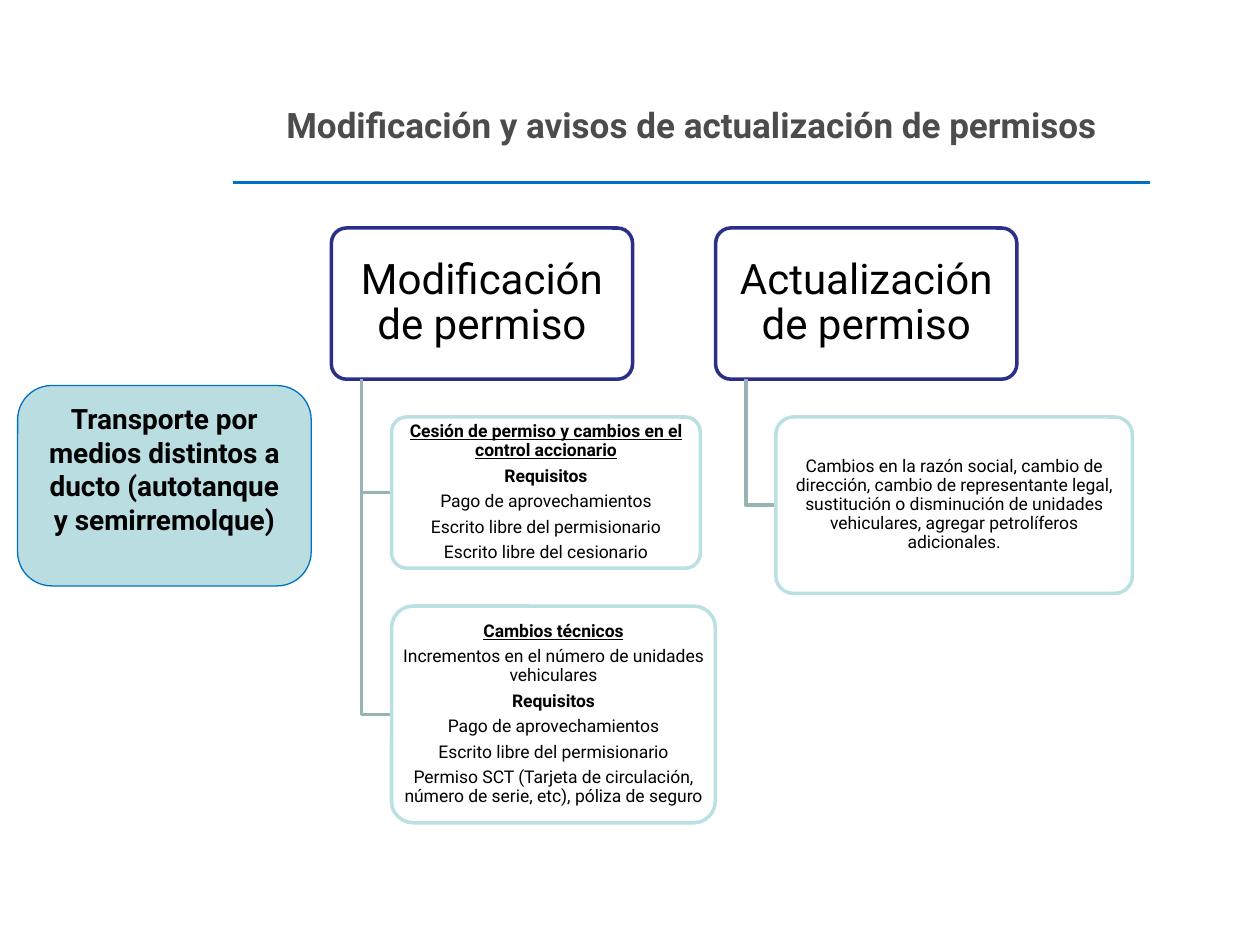
from pptx import Presentation
from pptx.dml.color import RGBColor
from pptx.enum.shapes import MSO_CONNECTOR, MSO_SHAPE
from pptx.enum.text import MSO_ANCHOR, PP_ALIGN
from pptx.oxml.ns import qn
from pptx.util import Inches, Pt

ROUNDED = MSO_SHAPE.ROUNDED_RECTANGLE
MIDDLE, TOP = MSO_ANCHOR.MIDDLE, MSO_ANCHOR.TOP
FONT = "Roboto"
WHITE, BLACK, GREY = "FFFFFF", "000000", "4C4C4C"
BLUE, NAVY, AQUA, TEAL, BRANCH_GREY = "0070C0", "2D2D8A", "BBE0E3", "BADDE1", "96B3B6"

TITLE = "Modificación y avisos de actualización de permisos"
SUBJECT = "Transporte por medios distintos a ducto (autotanque y semirremolque)"
PLAIN, BOLD, HEADING = "plain", "bold", "heading"

# Each branch: heading, then its boxes as (width, height, lines of text)
BRANCHES = [
    ("Modificación de permiso", [
        (2.45, 1.2, [
            ("Cesión de permiso y cambios en el control accionario", HEADING),
            ("Requisitos", BOLD),
            ("Pago de aprovechamientos", PLAIN),
            ("Escrito libre del permisionario", PLAIN),
            ("Escrito libre del cesionario", PLAIN),
        ]),
        (2.57, 1.72, [
            ("Cambios técnicos", HEADING),
            ("Incrementos en el número de unidades vehiculares", PLAIN),
            ("Requisitos", BOLD),
            ("Pago de aprovechamientos", PLAIN),
            ("Escrito libre del permisionario", PLAIN),
            ("Permiso SCT (Tarjeta de circulación, número de serie, etc), "
             "póliza de seguro", PLAIN),
        ]),
    ]),
    ("Actualización de permiso", [
        (2.83, 1.4, [
            ("Cambios en la razón social, cambio de dirección, cambio de "
             "representante legal, sustitución o disminución de unidades "
             "vehiculares, agregar petrolíferos adicionales.", PLAIN),
        ]),
    ]),
]

TREE_LEFT, TREE_TOP, BRANCH_STEP = 2.63, 1.81, 3.05
HEAD_WIDTH, HEAD_HEIGHT = 2.39, 1.2
TRUNK_OFFSET = HEAD_WIDTH / 10
CHILD_OFFSET = HEAD_WIDTH / 5
GAP = HEAD_HEIGHT / 4


def color(hex_string):
    return RGBColor.from_string(hex_string)


def write(shape, lines, size, hex_color=BLACK, anchor=MIDDLE, insets=(0.1, 0.05),
          line_spacing=1.0, space_after=0):
    frame = shape.text_frame
    frame.word_wrap = True
    frame.vertical_anchor = anchor
    frame.margin_left = frame.margin_right = Inches(insets[0])
    frame.margin_top = frame.margin_bottom = Inches(insets[1])
    for index, (text, style) in enumerate(lines):
        paragraph = frame.add_paragraph() if index else frame.paragraphs[0]
        paragraph.text = text
        paragraph.alignment = PP_ALIGN.CENTER
        paragraph.line_spacing = line_spacing
        paragraph.space_after = Pt(space_after)
        font = paragraph.font
        font.name, font.size = FONT, Pt(size)
        font.color.rgb = color(hex_color)
        font.bold = style != PLAIN
        font.underline = style == HEADING


def add_box(slide, position, fill, line, line_width, rounding):
    box = slide.shapes.add_shape(ROUNDED, *map(Inches, position))
    box.shadow.inherit = False
    box.adjustments[0] = rounding
    box.fill.solid()
    box.fill.fore_color.rgb = color(fill)
    box.line.color.rgb = color(line)
    box.line.width = Pt(line_width)
    return box


def add_elbow(slide, trunk, top, middle, end):
    """Draw a line down from a heading and right to the middle of a box."""
    builder = slide.shapes.build_freeform(Inches(trunk), Inches(top))
    builder.add_line_segments(
        [(Inches(trunk), Inches(middle)), (Inches(end), Inches(middle))], close=False)
    elbow = builder.convert_to_shape()
    elbow.shadow.inherit = False
    elbow.fill.background()
    elbow.line.color.rgb = color(BRANCH_GREY)
    elbow.line.width = Pt(2)


def add_branch(slide, left, heading, children):
    head = add_box(slide, (left, TREE_TOP, HEAD_WIDTH, HEAD_HEIGHT), WHITE, NAVY, 2, 0.1)
    write(head, [(heading, PLAIN)], 24, insets=(0.05, 0.03), line_spacing=0.9)
    head_bottom = TREE_TOP + HEAD_HEIGHT
    child_left = left + CHILD_OFFSET
    top = head_bottom + GAP
    for width, height, lines in children:
        add_elbow(slide, left + TRUNK_OFFSET, head_bottom, top + height / 2, child_left)
        child = add_box(slide, (child_left, top, width, height), WHITE, AQUA, 2, 0.1)
        write(child, lines, 10, insets=(0.02, 0.01), line_spacing=0.9, space_after=3.7)
        top += height + GAP


def main():
    presentation = Presentation()
    presentation.slide_width, presentation.slide_height = Inches(10), Inches(7.5)
    slide = presentation.slides.add_slide(presentation.slide_layouts[6])

    title = slide.shapes.add_textbox(*map(Inches, (1.85, 0.36, 7.28, 1.25)))
    write(title, [(TITLE, BOLD)], 20, GREY)

    rule = slide.shapes.add_connector(
        MSO_CONNECTOR.STRAIGHT, *map(Inches, (1.85, 1.45, 9.13, 1.45)))
    rule.line.color.rgb = color(BLUE)
    rule.line.width = Pt(1.5)
    properties = rule._element.spPr
    properties.append(properties.makeelement(qn("a:effectLst"), {}))

    for index, (heading, children) in enumerate(BRANCHES):
        add_branch(slide, TREE_LEFT + index * BRANCH_STEP, heading, children)

    subject = add_box(slide, (0.14, 3.06, 2.33, 1.59), TEAL, BLUE, 0.75, 0.17)
    write(subject, [(SUBJECT, BOLD)], 16, anchor=TOP)

    presentation.save("out.pptx")


if __name__ == "__main__":
    main()
